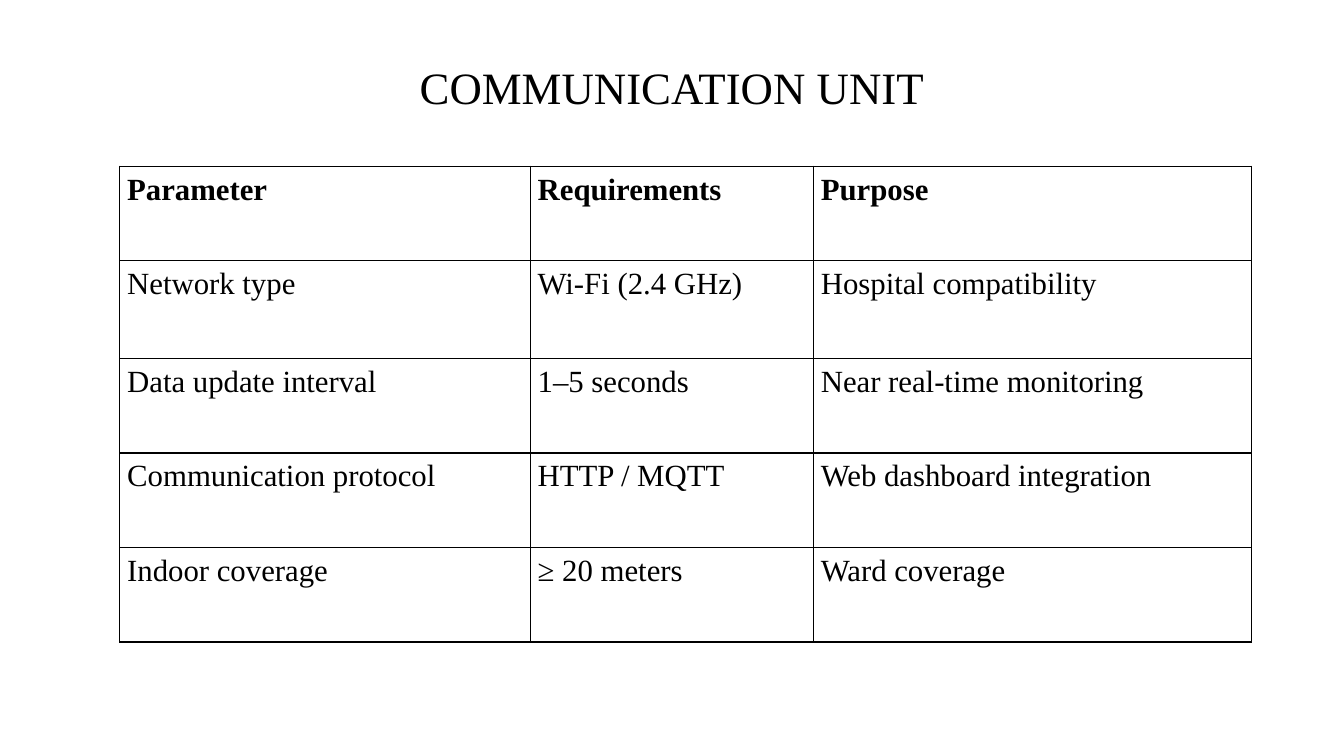
from lxml import etree
from pptx import Presentation
from pptx.dml.color import RGBColor
from pptx.enum.text import MSO_ANCHOR, PP_ALIGN
from pptx.oxml.ns import qn
from pptx.util import Pt

CENTER = PP_ALIGN.CENTER
MIDDLE = MSO_ANCHOR.MIDDLE

COLORS = {"text": "000000", "border": "000000", "cell": "FFFFFF"}

COLUMN_WIDTHS = [293.2, 202.3, 312.6]
ROW_HEIGHTS = [67.5, 69.8, 67.5, 67.5, 67.5]
ROWS = [
    ("Parameter", "Requirements", "Purpose"),
    ("Network type", "Wi-Fi (2.4 GHz)", "Hospital compatibility"),
    ("Data update interval", "1–5 seconds", "Near real-time monitoring"),
    ("Communication protocol", "HTTP / MQTT", "Web dashboard integration"),
    ("Indoor coverage", "≥ 20 meters", "Ward coverage"),
]


class SlideBuilder:
    font = "Times New Roman"

    def __init__(self, slide):
        self.slide = slide

    def format_runs(self, p, size, bold=False):
        for r in p.runs:
            r.font.name = self.font
            r.font.size = Pt(size)
            r.font.bold = bold
            r.font.color.rgb = RGBColor.from_string(COLORS["text"])

    def title(self, text, left, top, width, height):
        sp = self.slide.shapes.add_textbox(Pt(left), Pt(top), Pt(width), Pt(height))
        tf = sp.text_frame
        tf.word_wrap = True
        tf.vertical_anchor = MIDDLE
        tf.text = text
        p = tf.paragraphs[0]
        p.alignment = CENTER
        p.line_spacing = 0.9
        self.format_runs(p, 32)

    def table(self, rows, left, top, widths, heights):
        """Add a bordered table whose first row is bold."""
        frame = self.slide.shapes.add_table(
            len(rows), len(widths), Pt(left), Pt(top), Pt(sum(widths)), Pt(sum(heights)))
        table = frame.table
        table.first_row = False
        table.horz_banding = False
        for column, width in zip(table.columns, widths):
            column.width = Pt(width)
        for i, (row, height) in enumerate(zip(rows, heights)):
            table.rows[i].height = Pt(height)
            for j, text in enumerate(row):
                self.cell(table.cell(i, j), text, bold=i == 0)

    def cell(self, cell, text, bold):
        cell.margin_left, cell.margin_top = Pt(5.3), Pt(3)
        cell.margin_right, cell.margin_bottom = Pt(5.6), Pt(0)
        cell.text = text
        p = cell.text_frame.paragraphs[0]
        p.line_spacing = 1.07
        p.space_after = Pt(10.8)
        self.format_runs(p, 22, bold)
        self.borders(cell)
        cell.fill.solid()
        cell.fill.fore_color.rgb = RGBColor.from_string(COLORS["cell"])

    def borders(self, cell):
        tc_pr = cell._tc.get_or_add_tcPr()
        for side in ("lnL", "lnR", "lnT", "lnB"):
            ln = etree.SubElement(tc_pr, qn(f"a:{side}"), w=str(Pt(1)))
            fill = etree.SubElement(ln, qn("a:solidFill"))
            etree.SubElement(fill, qn("a:srgbClr"), val=COLORS["border"])


def main():
    prs = Presentation()
    prs.slide_width, prs.slide_height = Pt(960), Pt(540)
    s = SlideBuilder(prs.slides.add_slide(prs.slide_layouts[6]))
    s.title("COMMUNICATION UNIT", 66, 28.8, 828, 70.5)
    s.table(ROWS, 85.6, 118.8, COLUMN_WIDTHS, ROW_HEIGHTS)
    prs.save("out.pptx")


if __name__ == "__main__":
    main()
